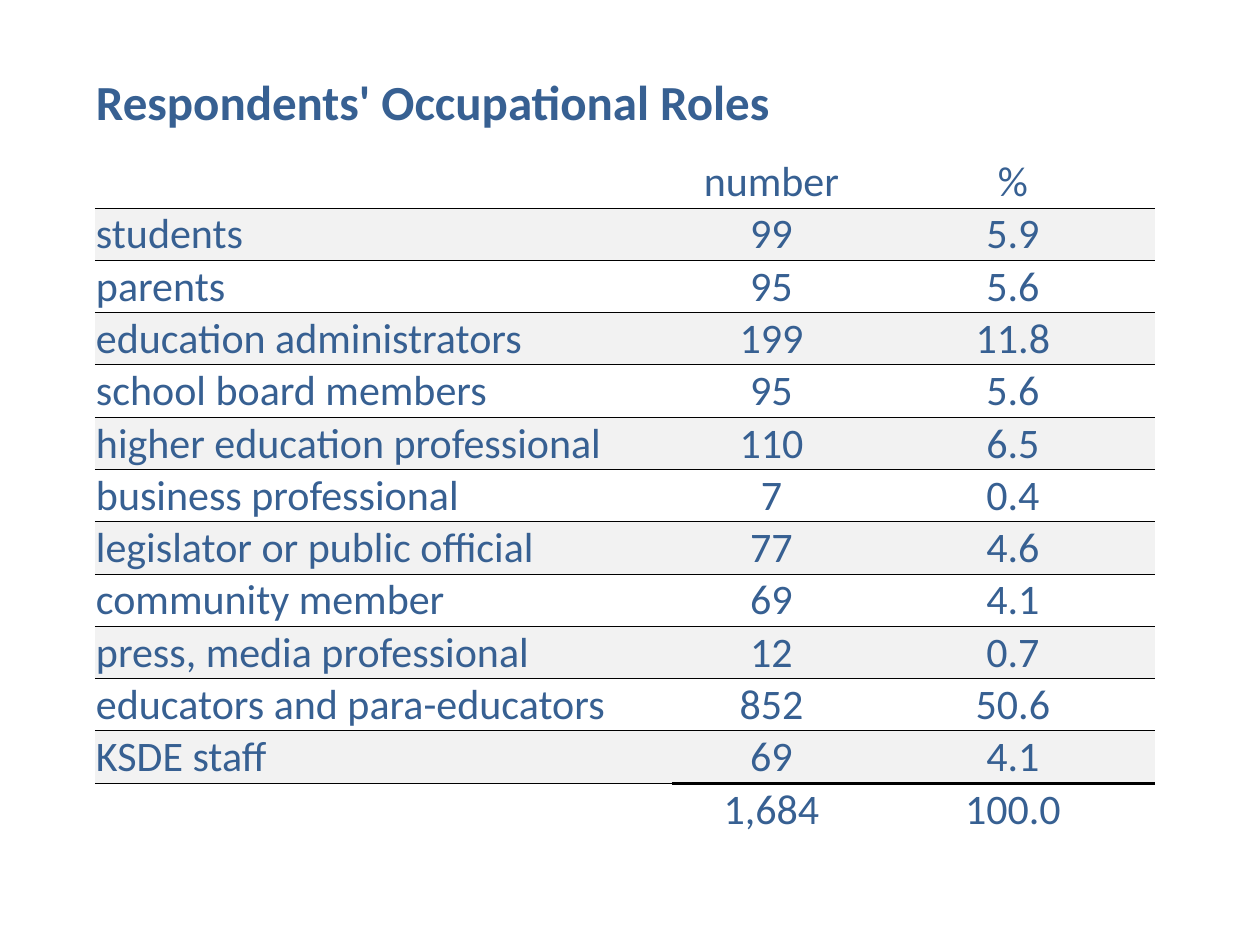
from lxml.etree import SubElement
from pptx import Presentation
from pptx.dml.color import RGBColor
from pptx.enum.text import MSO_ANCHOR, PP_ALIGN
from pptx.oxml.ns import qn
from pptx.util import Pt

EMU_PER_PX = 914400 / 126
COLORS = {"text": "376092", "band": "F2F2F2", "line": "000000"}
FONT = "Calibri"
NO_GRID_STYLE = "{2D5ABB26-0587-4C30-8999-92F81FD0307C}"

TITLE = "Respondents' Occupational Roles"
HEADER = ("", "number", "%")
ROLES = [
    ("students", "99", "5.9"),
    ("parents", "95", "5.6"),
    ("education administrators", "199", "11.8"),
    ("school board members", "95", "5.6"),
    ("higher education professional", "110", "6.5"),
    ("business professional", "7", "0.4"),
    ("legislator or public official", "77", "4.6"),
    ("community member", "69", "4.1"),
    ("press, media professional", "12", "0.7"),
    ("educators and para-educators", "852", "50.6"),
    ("KSDE staff", "69", "4.1"),
]
TOTAL = ("", "1,684", "100.0")

COL_WIDTHS = (577, 199, 284)
TITLE_HEIGHT, HEADER_HEIGHT, ROW_HEIGHT = 61, 74, 52


def px(n):
    return round(n * EMU_PER_PX)


def write_cell(cell, text, size=24, bold=False, align=PP_ALIGN.LEFT):
    cell.vertical_anchor = MSO_ANCHOR.BOTTOM
    cell.margin_left = cell.margin_right = cell.margin_top = px(1)
    cell.margin_bottom = 0
    if not text:
        return
    p = cell.text_frame.paragraphs[0]
    p.alignment = align
    r = p.add_run()
    r.text = text
    r.font.name = FONT
    r.font.size = Pt(size)
    r.font.bold = bold
    r.font.color.rgb = RGBColor.from_string(COLORS["text"])


def add_border(cell, side, width):
    ln = SubElement(cell._tc.get_or_add_tcPr(), qn(f"a:ln{side}"), w=str(Pt(width)))
    fill = SubElement(ln, qn("a:solidFill"))
    SubElement(fill, qn("a:srgbClr"), val=COLORS["line"])


def fill_cell(cell, banded):
    if banded:
        cell.fill.solid()
        cell.fill.fore_color.rgb = RGBColor.from_string(COLORS["band"])
    else:
        cell.fill.background()


def add_roles_table(s, left, top):
    rows = [(TITLE, "", ""), HEADER, *ROLES, TOTAL]
    heights = [TITLE_HEIGHT, HEADER_HEIGHT] + [ROW_HEIGHT] * (len(ROLES) + 1)
    frame = s.shapes.add_table(len(rows), len(COL_WIDTHS), px(left), px(top),
                               px(sum(COL_WIDTHS)), px(sum(heights)))
    table = frame.table
    table.first_row = table.horz_banding = False
    table._tbl.tblPr.find(qn("a:tableStyleId")).text = NO_GRID_STYLE
    for column, width in zip(table.columns, COL_WIDTHS):
        column.width = px(width)
    for row, height in zip(table.rows, heights):
        row.height = px(height)

    # Title across all columns
    table.cell(0, 0).merge(table.cell(0, 2))
    write_cell(table.cell(0, 0), TITLE, size=28, bold=True)

    # Header, roles and total, with a heavy rule above the sums
    last = len(rows) - 1
    for i in range(1, len(rows)):
        for j, text in enumerate(rows[i]):
            cell = table.cell(i, j)
            write_cell(cell, text, align=PP_ALIGN.CENTER if j else PP_ALIGN.LEFT)
            sum_rule = 2 if j else 0.5
            if i > 1:
                add_border(cell, "T", sum_rule if i == last else 0.5)
            if i < last:
                add_border(cell, "B", sum_rule if i == last - 1 else 0.5)
            fill_cell(cell, banded=i % 2 == 0 and i < last)


def main():
    prs = Presentation()
    prs.slide_width, prs.slide_height = px(1260), px(945)
    s = prs.slides.add_slide(prs.slide_layouts[6])
    add_roles_table(s, 95, 73)
    prs.save("out.pptx")


if __name__ == "__main__":
    main()
